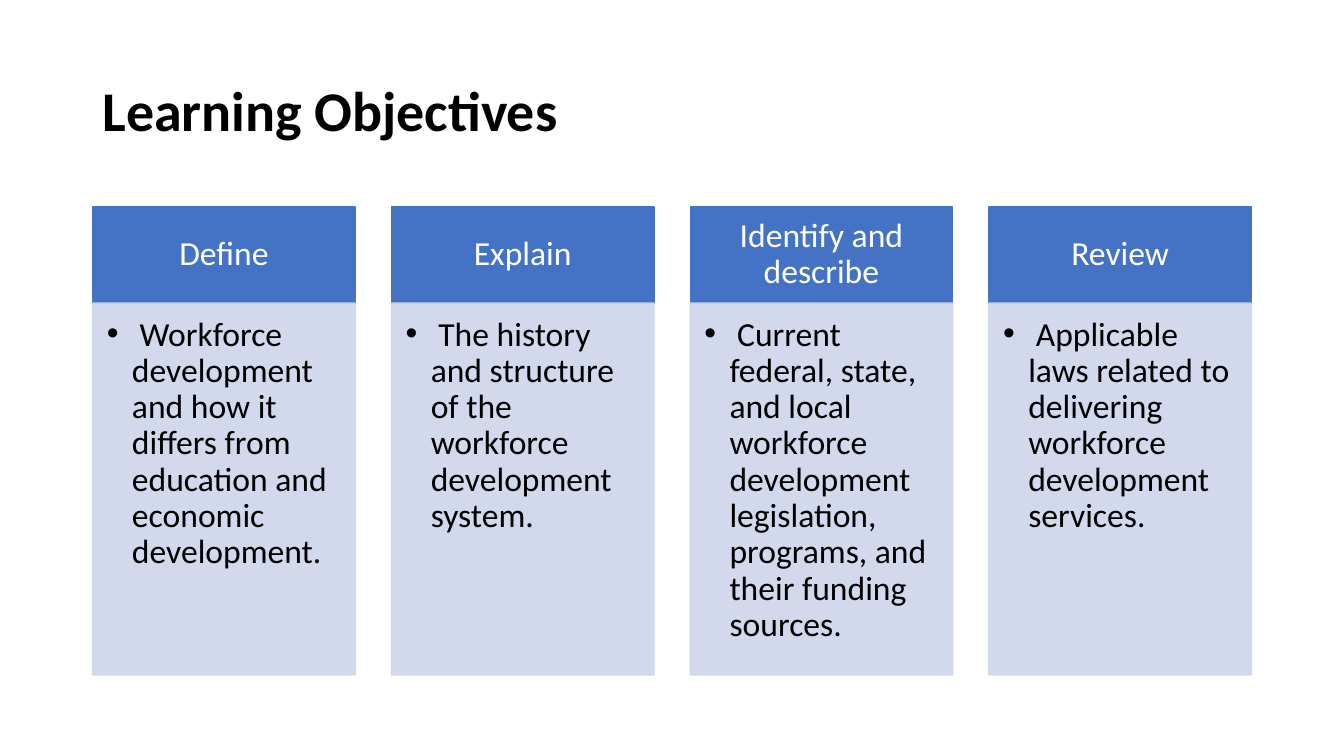
from lxml import etree
from pptx import Presentation
from pptx.dml.color import RGBColor
from pptx.enum.shapes import MSO_SHAPE
from pptx.enum.text import MSO_ANCHOR, MSO_AUTO_SIZE, PP_ALIGN
from pptx.oxml.ns import qn
from pptx.util import Pt

RECT = MSO_SHAPE.RECTANGLE
TOP, MIDDLE = MSO_ANCHOR.TOP, MSO_ANCHOR.MIDDLE
LEFT, CENTER = PP_ALIGN.LEFT, PP_ALIGN.CENTER
NO_FIT = MSO_AUTO_SIZE.NONE

COLORS = {"header": "4472C4", "body": "CFD5EA", "dark": "000000", "light": "FFFFFF"}
OBJECTIVES = [
    ("Define", "Workforce development and how it differs from education and economic development."),
    ("Explain", "The history and structure of the workforce development system."),
    ("Identify and describe", "Current federal, state, and local workforce development "
     "legislation, programs, and their funding sources."),
    ("Review", "Applicable laws related to delivering workforce development services."),
]
COLUMN_LEFT, COLUMN_STEP, COLUMN_WIDTH = 66.2, 213.4, 187.5
HEADER_TOP, HEADER_HEIGHT = 147.8, 68.6
BODY_TOP, BODY_HEIGHT = HEADER_TOP + HEADER_HEIGHT, 265.7


def write(sp, text, size, color, align, anchor, margins, bold=False):
    """Put one formatted paragraph in the shape and return it; margins run left, top, right, bottom."""
    tf = sp.text_frame
    frame_format = {"word_wrap": True, "auto_size": NO_FIT, "vertical_anchor": anchor}
    for side, margin in zip(("left", "top", "right", "bottom"), margins):
        frame_format[f"margin_{side}"] = Pt(margin)
    for name, value in frame_format.items():
        setattr(tf, name, value)
    p = tf.paragraphs[0]
    p.alignment, p.line_spacing = align, 0.9
    r = p.add_run()
    r.text = text
    for name, value in {"name": "Calibri", "size": Pt(size), "bold": bold}.items():
        setattr(r.font, name, value)
    r.font.color.rgb = RGBColor.from_string(COLORS[color])
    return p


def add_panel(s, left, top, height, color):
    sp = s.shapes.add_shape(RECT, Pt(left), Pt(top), Pt(COLUMN_WIDTH), Pt(height))
    sp.shadow.inherit = False
    sp.fill.solid()
    sp.line.width = Pt(1)
    for target in (sp.fill.fore_color, sp.line.color):
        target.rgb = RGBColor.from_string(COLORS[color])
    return sp


prs = Presentation()
prs.slide_width, prs.slide_height = Pt(960), Pt(540)
s = prs.slides.add_slide(prs.slide_layouts[5])

title = s.shapes.title
title.left, title.top, title.width, title.height = Pt(66), Pt(28.75), Pt(828), Pt(104.4)
write(title, "Learning Objectives", 40, "dark", LEFT, MIDDLE, (7.2, 3.6, 7.2, 3.6), bold=True)

for i, (verb, objective) in enumerate(OBJECTIVES):
    left = COLUMN_LEFT + i * COLUMN_STEP
    header = add_panel(s, left, HEADER_TOP, HEADER_HEIGHT, "header")
    write(header, verb, 24, "light", CENTER, MIDDLE, (13.44, 7.68, 13.44, 7.68))

    body = add_panel(s, left, BODY_TOP, BODY_HEIGHT, "body")
    for color in body._element.spPr.iter(qn("a:srgbClr")):
        etree.SubElement(color, qn("a:alpha"), val="90000")
    p = write(body, f" {objective}", 24, "dark", LEFT, TOP, (10.08, 10.08, 13.44, 15.12))
    p.level = 1
    pPr = p._p.get_or_add_pPr()
    pPr.set("marL", str(Pt(18)))
    pPr.set("indent", str(-Pt(18)))
    etree.SubElement(pPr, qn("a:buFont"), typeface="Arial")
    etree.SubElement(pPr, qn("a:buChar"), char="•")

prs.save("out.pptx")
